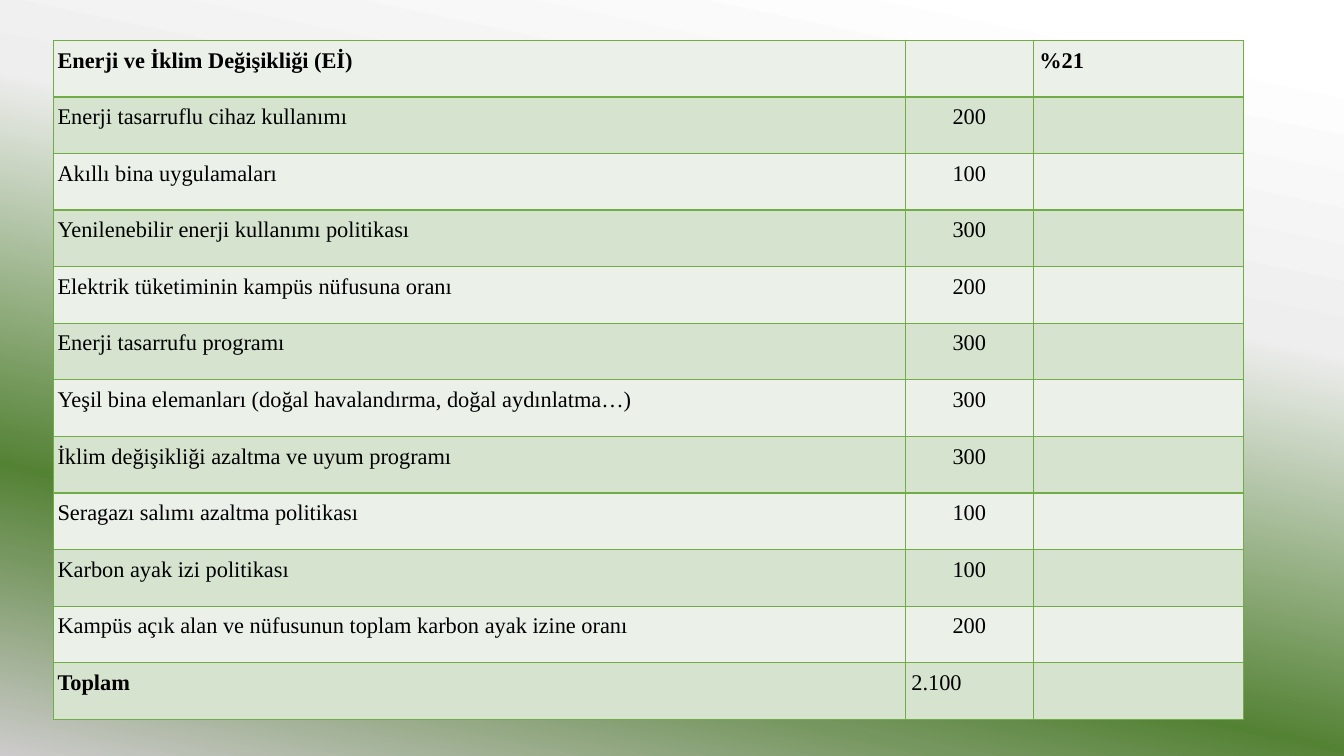
from lxml.etree import SubElement
from pptx import Presentation
from pptx.dml.color import RGBColor
from pptx.enum.text import PP_ALIGN
from pptx.oxml import parse_xml
from pptx.oxml.ns import nsdecls, qn
from pptx.util import Pt

HEADING = ("Enerji ve İklim Değişikliği (Eİ)", "", "%21")
CRITERIA = [
    ("Enerji tasarruflu cihaz kullanımı", "200"),
    ("Akıllı bina uygulamaları", "100"),
    ("Yenilenebilir enerji kullanımı politikası", "300"),
    ("Elektrik tüketiminin kampüs nüfusuna oranı", "200"),
    ("Enerji tasarrufu programı", "300"),
    ("Yeşil bina elemanları (doğal havalandırma, doğal aydınlatma…)", "300"),
    ("İklim değişikliği azaltma ve uyum programı", "300"),
    ("Seragazı salımı azaltma politikası", "100"),
    ("Karbon ayak izi politikası", "100"),
    ("Kampüs açık alan ve nüfusunun toplam karbon ayak izine oranı", "200"),
]
TOTAL = ("Toplam", "2.100", "")
ROWS = [HEADING, *[(name, points, "") for name, points in CRITERIA], TOTAL]

COLORS = {"text": "000000", "border": "70AD47", "light": "EBF1E9", "dark": "D5E3CF"}
BACKGROUND_STOPS = [(6, "FFFFFF"), (34, "EEEEEE"), (72, "548235"), (80, "75965E"), (100, "CDCBCB")]
BACKGROUND_ANGLE = 102

FONT = "Times New Roman"
LEFT, TOP = 38.2, 28.8
COLUMN_WIDTHS = [608.4, 91.4, 150.4]
ROW_HEIGHT = 40.45


def paint_background(slide):
    fill = slide.background.fill
    fill.gradient()
    gradient = slide.background._cSld.find(".//" + qn("a:gradFill"))
    for part in list(gradient):
        gradient.remove(part)
    stops = SubElement(gradient, qn("a:gsLst"))
    for percent, color in BACKGROUND_STOPS:
        stop = SubElement(stops, qn("a:gs"), pos=str(percent * 1000))
        SubElement(stop, qn("a:srgbClr"), val=color)
    SubElement(gradient, qn("a:lin"), ang=str(BACKGROUND_ANGLE * 60000), scaled="0")


def add_borders(cell):
    properties = cell._tc.get_or_add_tcPr()
    for position, side in enumerate("LRTB"):
        properties.insert(position, parse_xml(
            f'<a:ln{side} {nsdecls("a")} w="{Pt(1)}"><a:solidFill>'
            f'<a:srgbClr val="{COLORS["border"]}"/></a:solidFill></a:ln{side}>'))


def write_cell(cell, text, bold, centred, indent):
    cell.margin_left, cell.margin_top = Pt(2.9), Pt(4.3)
    cell.margin_right, cell.margin_bottom = Pt(4.3), Pt(0)
    cell.text = text
    paragraph = cell.text_frame.paragraphs[0]
    paragraph.line_spacing = 1.07
    paragraph.alignment = PP_ALIGN.CENTER if centred else PP_ALIGN.LEFT
    paragraph._p.get_or_add_pPr().set("marL", str(Pt(indent)))
    font = paragraph.font
    font.name, font.size, font.bold = FONT, Pt(16), bold
    font.color.rgb = RGBColor.from_string(COLORS["text"])


def add_score_table(slide):
    table = slide.shapes.add_table(
        len(ROWS), len(COLUMN_WIDTHS), Pt(LEFT), Pt(TOP),
        Pt(sum(COLUMN_WIDTHS)), Pt(ROW_HEIGHT * len(ROWS))).table
    table.first_row = table.horz_banding = False
    for column, width in zip(table.columns, COLUMN_WIDTHS):
        column.width = Pt(width)
    for r, entries in enumerate(ROWS):
        table.rows[r].height = Pt(ROW_HEIGHT)
        for c, text in enumerate(entries):
            cell = table.cell(r, c)
            cell.fill.solid()
            band = COLORS["dark" if r % 2 else "light"]
            cell.fill.fore_color.rgb = RGBColor.from_string(band)
            add_borders(cell)
            if text:
                write_cell(cell, text,
                           bold=entries is HEADING or text == TOTAL[0],
                           centred=c == 1 and entries is not TOTAL,
                           indent=1.5 if c else 0)


def main():
    presentation = Presentation()
    presentation.slide_width, presentation.slide_height = Pt(960), Pt(540)
    slide = presentation.slides.add_slide(presentation.slide_layouts[6])
    paint_background(slide)
    add_score_table(slide)
    presentation.save("out.pptx")


if __name__ == "__main__":
    main()
